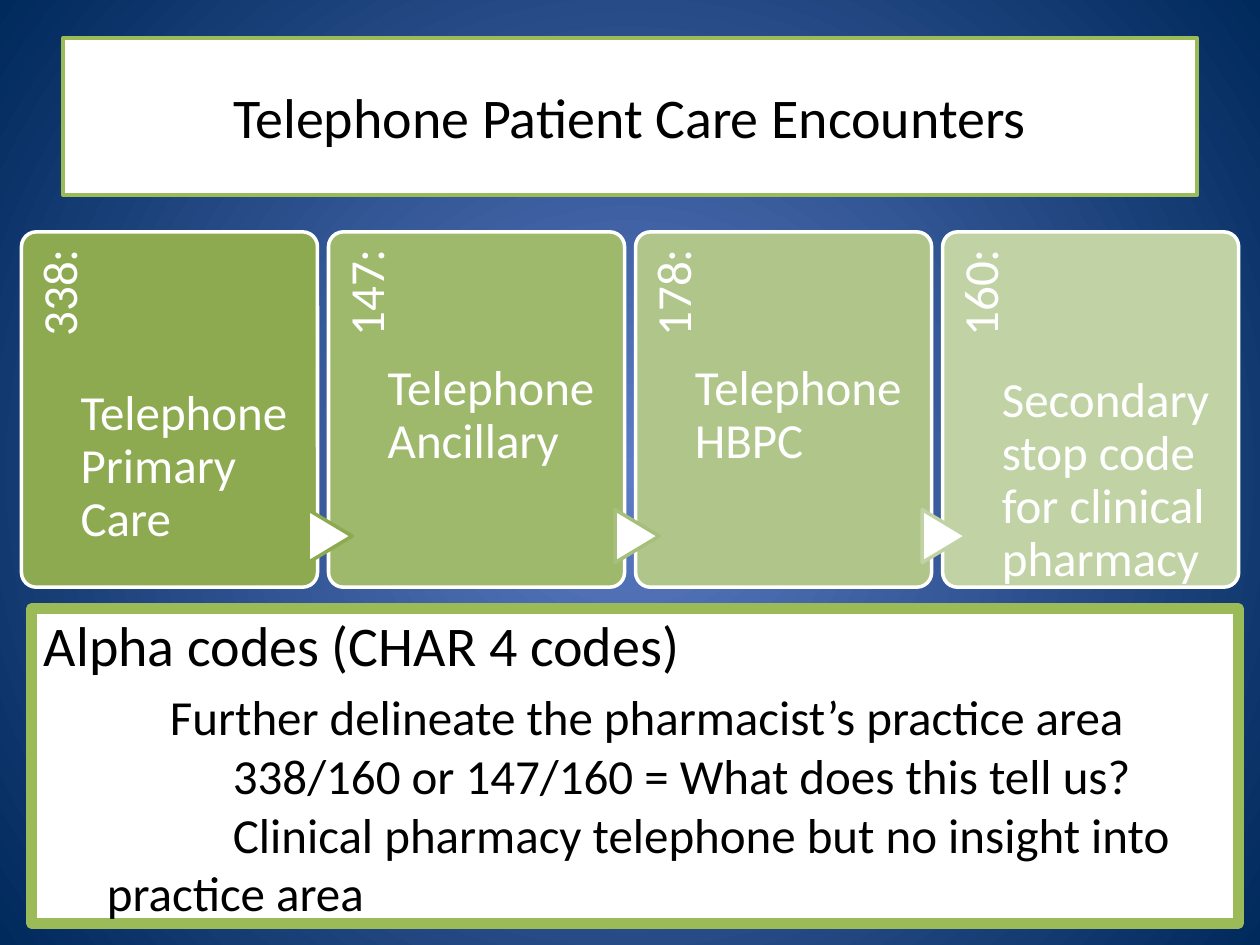
from lxml import etree
from pptx import Presentation
from pptx.dml.color import RGBColor
from pptx.enum.shapes import MSO_SHAPE
from pptx.enum.text import MSO_ANCHOR, PP_ALIGN
from pptx.oxml.ns import qn
from pptx.util import Inches, Pt

RECT, ROUND = MSO_SHAPE.RECTANGLE, MSO_SHAPE.ROUNDED_RECTANGLE
ARROW = MSO_SHAPE.FLOWCHART_EXTRACT
TOP, MID, LOW = MSO_ANCHOR.TOP, MSO_ANCHOR.MIDDLE, MSO_ANCHOR.BOTTOM
LEFT, MIDDLE, RIGHT = PP_ALIGN.LEFT, PP_ALIGN.CENTER, PP_ALIGN.RIGHT

TITLE = "Telephone Patient Care Encounters"
CARDS = [
    ("338:", "Telephone Primary Care", "8DAA51", "8DAA51"),
    ("147:", "Telephone Ancillary", "9EB86C", "A6BF7A"),
    ("178:", "Telephone HBPC", "AFC589", "C1D3A5"),
    ("160:", "Secondary stop code for clinical pharmacy", "C1D3A5", None),
]
NOTES = [
    ("Alpha codes (CHAR 4 codes)", 32, 0, 0, 0),
    ("Further delineate the pharmacist’s practice area", 28, 0, 1, 5),
    ("338/160 or 147/160 = What does this tell us?", 28, 0.5, 1, 0),
    ("Clinical pharmacy telephone but no insight into practice area", 28, 0.5, 1, 0),
]
WHITE, BLACK, GREEN = "FFFFFF", "000000", "9BBB59"
CARD_X, CARD_Y, CARD_W, CARD_H, STEP = 0.17, 1.84, 2.35, 2.82, 2.437


def rgb(code):
    """Turn a hex string into a colour."""
    return RGBColor.from_string(code)


def paint(shape, fill, line, width):
    """Set the fill and outline of a shape."""
    shape.fill.solid()
    shape.fill.fore_color.rgb = rgb(fill)
    shape.line.color.rgb = rgb(line)
    shape.line.width = Pt(width)


def block(shapes, kind, box, fill, line, width):
    """Add a painted preset shape."""
    shape = shapes.add_shape(kind, *map(Inches, box))
    shape.shadow.inherit = False
    paint(shape, fill, line, width)
    return shape


def frame(shape, anchor, insets=(0.1, 0.05, 0.1, 0.05)):
    """Set wrapping, anchor and insets of a text frame."""
    text = shape.text_frame
    left, top, right, bottom = map(Inches, insets)
    form = dict(word_wrap=True, vertical_anchor=anchor, margin_left=left,
                margin_top=top, margin_right=right, margin_bottom=bottom)
    for name, value in form.items():
        setattr(text, name, value)
    return text


def write(para, words, size, color, **form):
    """Fill a paragraph with styled text."""
    run = para.add_run()
    run.text = words
    run.font.name, run.font.size = "Calibri", Pt(size)
    run.font.color.rgb = rgb(color)
    for name, value in form.items():
        setattr(para, name, value)


def label(shapes, box, words, anchor, insets, align, turn=0):
    """Add a white text box on a card."""
    shape = shapes.add_textbox(*map(Inches, box))
    shape.rotation = turn
    text = frame(shape, anchor, insets)
    write(text.paragraphs[0], words, 28, WHITE, alignment=align, line_spacing=0.9)


def backdrop(slide):
    """Give the slide a radial blue gradient."""
    fill = slide.background.fill
    fill.gradient()
    for stop, code in zip(fill.gradient_stops, ("5E7CC5", "00295C")):
        stop.color.rgb = rgb(code)
    grad = next(slide.element.iter(qn("a:gradFill")))
    grad.remove(grad.find(qn("a:lin")))
    ring = etree.SubElement(grad, qn("a:path"), {"path": "circle"})
    etree.SubElement(ring, qn("a:fillToRect"), dict.fromkeys("ltrb", "50000"))


def cards(shapes):
    """Lay out the row of code cards and the arrows between them."""
    for i, (code, words, fill, edge) in enumerate(CARDS):
        x = CARD_X + i * STEP
        last = i == len(CARDS) - 1
        card = block(shapes, ROUND, (x, CARD_Y, CARD_W, CARD_H), fill, WHITE, 2)
        card.adjustments[0] = 0.05
        label(shapes, (x - 0.92, 2.76, 2.32, 0.47), code, TOP,
              (0, 0.1, 0.14, 0), RIGHT, 270)
        label(shapes, (x + 0.47, CARD_Y, 1.75, CARD_H), words, LOW if last else TOP,
              (0, 0.1 if last else 1.24, 0, 0), LEFT)
    for i, (code, words, fill, edge) in enumerate(CARDS[:-1]):
        box = (CARD_X + i * STEP + 2.24, 4.08, 0.42, 0.35)
        block(shapes, ARROW, box, WHITE, edge, 2).rotation = 90


def notes(shapes):
    """Add the framed notes under the cards."""
    panel = block(shapes, RECT, (0.25, 4.83, 9.58, 2.5), WHITE, GREEN, 6)
    text = frame(panel, MID)
    for i, (words, size, margin, indent, gap) in enumerate(NOTES):
        para = text.add_paragraph() if i else text.paragraphs[0]
        write(para, words, size, BLACK, alignment=LEFT, space_before=Pt(gap))
        props = para._p.get_or_add_pPr()
        props.set("marL", str(Inches(margin)))
        props.set("indent", str(Inches(indent)))


def main():
    """Build and save the slide."""
    deck = Presentation()
    deck.slide_width, deck.slide_height = Inches(10), Inches(7.5)
    slide = deck.slides.add_slide(deck.slide_layouts[5])
    backdrop(slide)
    title = slide.shapes.title
    spots = dict(left=0.5, top=0.3, width=9, height=1.25)
    for name, value in spots.items():
        setattr(title, name, Inches(value))
    paint(title, WHITE, GREEN, 2)
    head = frame(title, MID).paragraphs[0]
    write(head, TITLE, 32, BLACK, alignment=MIDDLE)
    notes(slide.shapes)
    cards(slide.shapes)
    deck.save("out.pptx")


if __name__ == "__main__":
    main()
